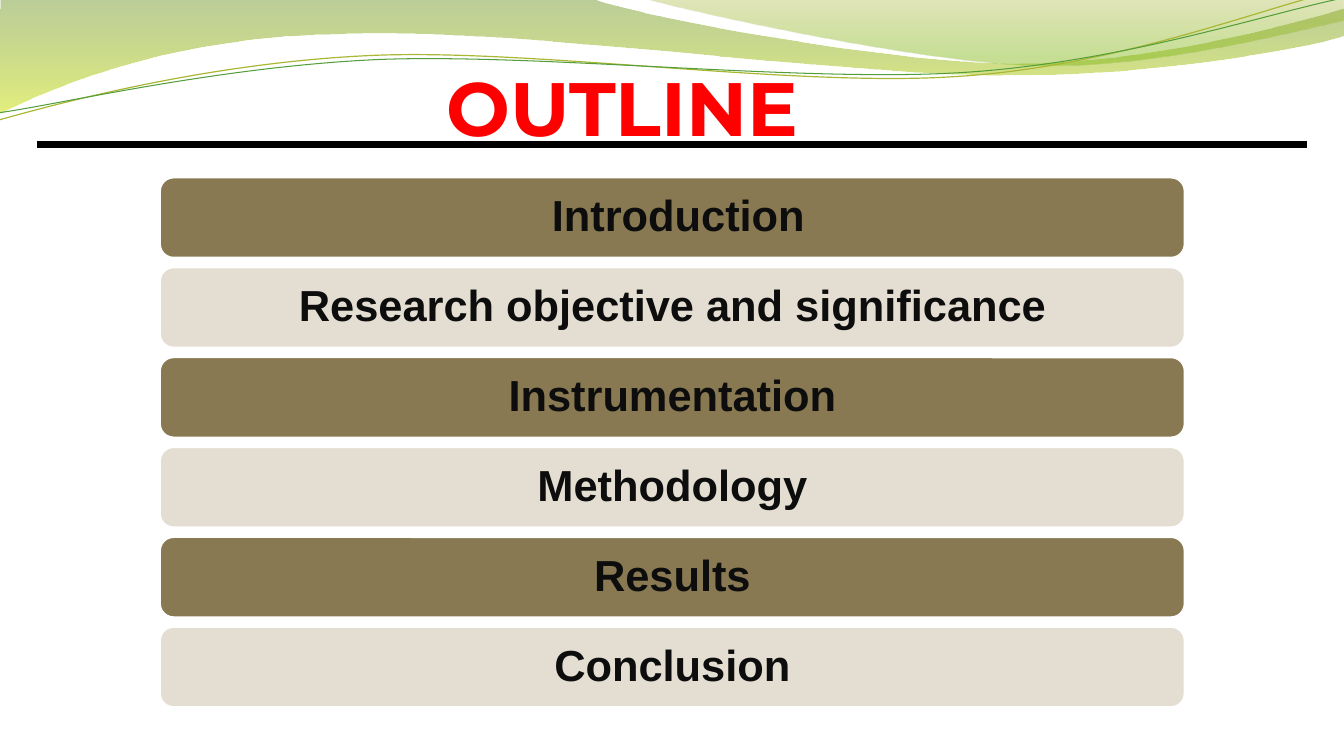
from dataclasses import dataclass
from typing import Optional

from lxml import etree
from pptx import Presentation
from pptx import util as u
from pptx.dml.color import RGBColor
from pptx.enum import shapes, text
from pptx.oxml.ns import qn

Pt = u.Pt
COLORS = {
    "title": "FF0000", "title_edge": "8AB833", "rule": "000000",
    "dark_bar": "887952", "light_bar": "E3DED1", "bar_edge": "FFFFFF",
    "bar_text": "0D0D0D", "olive": "69921C", "lime": "CCE10F",
    "moss": "9BAA1A", "leaf": "81BA16", "gold": "A9B733", "green": "549E39",
}


@dataclass
class Stop:
    position: float
    color: str
    alpha: int


@dataclass
class Wave:
    start: tuple[float, float]
    segments: list[tuple[float, ...]]  # 2 numbers: line, 6 numbers: Bezier curve
    stops: Optional[list[Stop]] = None
    line: Optional[str] = None
    width: float = 0
    rotation: float = 0


@dataclass
class Bar:
    label: str
    color: str


WAVES = [
    Wave((0, 0), [(422.6, -0.7),
                  (456.5, 12.2, 636.5, 45.4, 727.9, 45.4),
                  (818.6, 45.4, 919.4, 18.7, 959.8, 6.5),
                  (960.5, 25.9),
                  (943.9, 31.7, 834.5, 54.7, 715.7, 54),
                  (596.9, 54, 366.5, 20.2, 247, 24.5),
                  (123.8, 25.9, 43.9, 59.8, -1.4, 81.4)],
         stops=[Stop(0, "olive", 45), Stop(1, "lime", 55)]),
    Wave((459.4, -0.7), [(488.9, 7.9, 654.5, 44.6, 738, 46.8),
                         (820.8, 49.7, 923, 23, 959.8, 15.1),
                         (959.8, 0)],
         stops=[Stop(0, "moss", 30), Stop(0.8, "leaf", 45)]),
    Wave((-2.3, 63.1), [(44.4, 52.3, 151.4, 29.2, 266, 29.6),
                        (379.8, 29.9, 567, 66.8, 682.5, 64.3),
                        (798.5, 62.6, 901.9, 25.7, 959.4, 15.4)],
         line="gold", width=0.85, rotation=357.3),
    Wave((-2, 57.9), [(43.6, 53.7, 157.2, 32.3, 271.6, 32.7),
                      (386.9, 33.8, 572.2, 63.4, 687, 61.6),
                      (801.6, 59.8, 904.6, 30, 961.4, 21.2)],
         line="green", width=0.75, rotation=357.3),
]

BARS = [Bar(label, ("dark_bar", "light_bar")[i % 2]) for i, label in enumerate([
    " Introduction", "Research objective and significance", "Instrumentation",
    "Methodology", "Results", "Conclusion"])]
BAR_LEFT, BAR_TOP, BAR_WIDTH, BAR_HEIGHT, BAR_PITCH = 114.5, 127, 731.5, 56.9, 64.2


def rgb(name: str) -> RGBColor:
    return RGBColor.from_string(COLORS[name])


def apply(target, values: dict) -> None:
    for name, value in values.items():
        setattr(target, name, value)


def set_text(sp, label: str, font: dict, color: str, frame: dict, para: dict):
    tf = sp.text_frame
    apply(tf, frame)
    p = tf.paragraphs[0]
    apply(p, {"alignment": text.PP_ALIGN.CENTER, **para})
    r = p.add_run()
    r.text = label
    apply(r.font, {"bold": True, **font})
    r.font.color.rgb = rgb(color)
    return r


def bend(sp, segments: list[tuple[float, ...]]) -> None:
    """Join the three lines of each curved segment into one Bezier curve."""
    lines = iter(list(sp._element.iter(qn("a:lnTo"))))
    for seg in segments:
        first = next(lines)
        if len(seg) == 6:
            first.tag = qn("a:cubicBezTo")
            for _ in range(2):
                extra = next(lines)
                first.append(extra[0])
                extra.getparent().remove(extra)


def draw_wave(s, wave: Wave) -> None:
    points = [(Pt(seg[i]), Pt(seg[i + 1]))
              for seg in wave.segments for i in range(0, len(seg), 2)]
    fb = s.shapes.build_freeform(Pt(wave.start[0]), Pt(wave.start[1]))
    fb.add_line_segments(points, close=wave.line is None)
    sp = fb.convert_to_shape()
    bend(sp, wave.segments)
    sp.rotation = wave.rotation
    sp.shadow.inherit = False
    if wave.line:
        sp.fill.background()
        sp.line.color.rgb = rgb(wave.line)
        sp.line.width = Pt(wave.width)
        return
    sp.line.fill.background()
    sp.fill.gradient()
    sp.fill.gradient_angle = 270
    for gs, stop in zip(sp.fill.gradient_stops, wave.stops):
        gs.position = stop.position
        gs.color.rgb = rgb(stop.color)
    for clr, stop in zip(sp._element.spPr.iter(qn("a:srgbClr")), wave.stops):
        etree.SubElement(clr, qn("a:alpha"), val=str(stop.alpha * 1000))


def draw_title(s) -> None:
    sp = s.shapes.title
    apply(sp, {"left": Pt(301), "top": Pt(39.6), "width": Pt(287.3), "height": Pt(72.7)})
    r = set_text(sp, "OUTLINE", {"name": "Montserrat", "size": Pt(54)}, "title",
                 {"word_wrap": False, "auto_size": text.MSO_AUTO_SIZE.NONE,
                  "vertical_anchor": text.MSO_ANCHOR.TOP}, {})
    # Thin outline around the letters
    ln = etree.Element(qn("a:ln"), w=str(Pt(0.52)))
    fill = etree.SubElement(ln, qn("a:solidFill"))
    etree.SubElement(fill, qn("a:srgbClr"), val=COLORS["title_edge"])
    r.font._element.insert(0, ln)


def draw_rule(s) -> None:
    cxn = s.shapes.add_connector(shapes.MSO_CONNECTOR.STRAIGHT,
                                 Pt(26.2), Pt(103), Pt(933.6), Pt(103))
    cxn.line.color.rgb = rgb("rule")
    cxn.line.width = Pt(5)
    etree.SubElement(cxn._element.spPr, qn("a:effectLst"))


def draw_bar(s, bar: Bar, row: int) -> None:
    sp = s.shapes.add_shape(shapes.MSO_SHAPE.ROUNDED_RECTANGLE, Pt(BAR_LEFT),
                            Pt(BAR_TOP + row * BAR_PITCH), Pt(BAR_WIDTH), Pt(BAR_HEIGHT))
    sp.shadow.inherit = False
    sp.fill.solid()
    sp.fill.fore_color.rgb = rgb(bar.color)
    sp.line.color.rgb = rgb("bar_edge")
    sp.line.width = Pt(1)
    set_text(sp, bar.label, {"name": "Arial", "size": Pt(31)}, "bar_text",
             {"word_wrap": True, "vertical_anchor": text.MSO_ANCHOR.MIDDLE},
             {"line_spacing": 0.9})


def main() -> None:
    prs = Presentation()
    prs.slide_width, prs.slide_height = Pt(960), Pt(540)
    s = prs.slides.add_slide(prs.slide_layouts[5])
    # Wavy header
    for wave in WAVES:
        draw_wave(s, wave)
    # Title and rule
    draw_title(s)
    draw_rule(s)
    # Outline bars
    for row, bar in enumerate(BARS):
        draw_bar(s, bar, row)
    prs.save("out.pptx")


if __name__ == "__main__":
    main()
